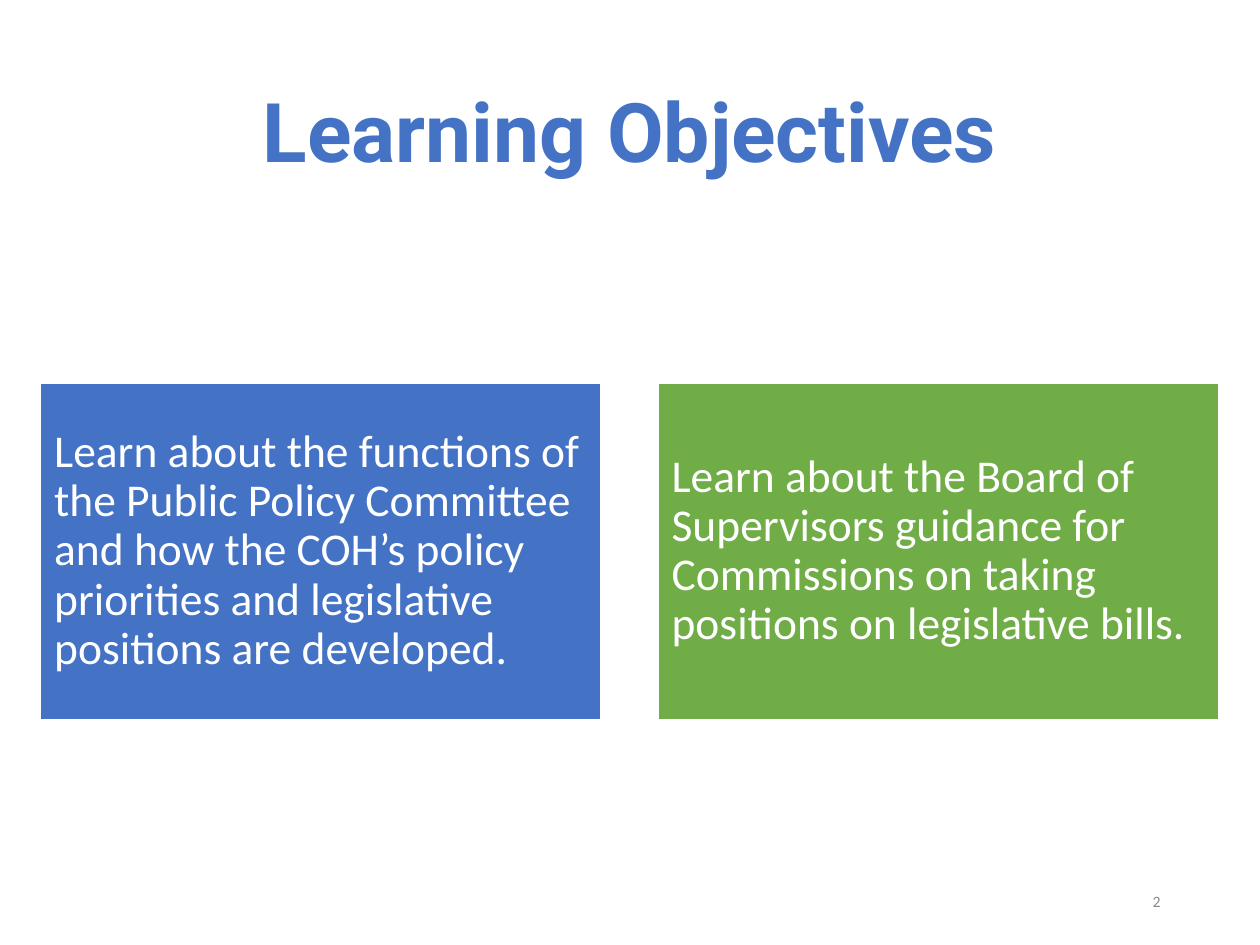
from pptx import Presentation
from pptx.dml.color import RGBColor
from pptx.enum.shapes import MSO_SHAPE
from pptx.enum.text import MSO_ANCHOR, PP_ALIGN
from pptx.util import Inches, Pt

BLUE = RGBColor(0x44, 0x72, 0xC4)
GREEN = RGBColor(0x70, 0xAD, 0x47)
WHITE = RGBColor(0xFF, 0xFF, 0xFF)
GRAY = RGBColor(0x89, 0x89, 0x89)

MARGIN = 0.32
CARD_TOP, CARD_WIDTH, CARD_HEIGHT, CARD_GAP = 3.04, 4.45, 2.67, 0.45

OBJECTIVES = [
    ("Learn about the functions of the Public Policy Committee and how the "
     "COH’s policy priorities and legislative positions are developed.", BLUE),
    ("Learn about the Board of Supervisors guidance for Commissions on taking "
     "positions on legislative bills.", GREEN),
]


class SlideBuilder:
    """Holds the text style and the slide being filled."""

    title_font = "Roboto"
    body_font = "Calibri"

    def __init__(self, slide):
        self.slide = slide

    def set_text(self, shape, text, size, color, font=body_font,
                 align=PP_ALIGN.LEFT, bold=False, line_spacing=0.9):
        text_frame = shape.text_frame
        text_frame.text = text
        text_frame.word_wrap = True
        text_frame.vertical_anchor = MSO_ANCHOR.MIDDLE
        paragraph = text_frame.paragraphs[0]
        paragraph.alignment = align
        paragraph.line_spacing = line_spacing
        run_font = paragraph.runs[0].font
        run_font.name = font
        run_font.size = Pt(size)
        run_font.bold = bold
        run_font.color.rgb = color

    def title(self, text, left, top, width, height):
        shape = self.slide.shapes.title
        shape.left, shape.top = Inches(left), Inches(top)
        shape.width, shape.height = Inches(width), Inches(height)
        self.set_text(shape, text, 47, BLUE, self.title_font, PP_ALIGN.CENTER, True)

    def card(self, text, fill, left, top, width, height):
        shape = self.slide.shapes.add_shape(
            MSO_SHAPE.RECTANGLE, Inches(left), Inches(top), Inches(width), Inches(height))
        shape.shadow.inherit = False
        shape.fill.solid()
        shape.fill.fore_color.rgb = fill
        shape.line.color.rgb = WHITE
        shape.line.width = Pt(1)
        text_frame = shape.text_frame
        text_frame.margin_left = text_frame.margin_right = Inches(0.11)
        text_frame.margin_top = text_frame.margin_bottom = Inches(0.11)
        self.set_text(shape, text, 26, WHITE)

    def page_number(self, text, left, top, width, height):
        shape = self.slide.shapes.add_textbox(
            Inches(left), Inches(top), Inches(width), Inches(height))
        self.set_text(shape, text, 9, GRAY, align=PP_ALIGN.RIGHT, line_spacing=1.0)


def main():
    presentation = Presentation()
    presentation.slide_width, presentation.slide_height = Inches(10), Inches(7.5)
    title_only = presentation.slide_layouts[5]
    builder = SlideBuilder(presentation.slides.add_slide(title_only))

    builder.title("Learning Objectives", MARGIN, 0.35, 10 - 2 * MARGIN, 1.45)
    for index, (text, fill) in enumerate(OBJECTIVES):
        left = MARGIN + index * (CARD_WIDTH + CARD_GAP)
        builder.card(text, fill, left, CARD_TOP, CARD_WIDTH, CARD_HEIGHT)
    builder.page_number("2", 7.06, 6.95, 2.25, 0.4)

    presentation.save("out.pptx")


if __name__ == "__main__":
    main()
